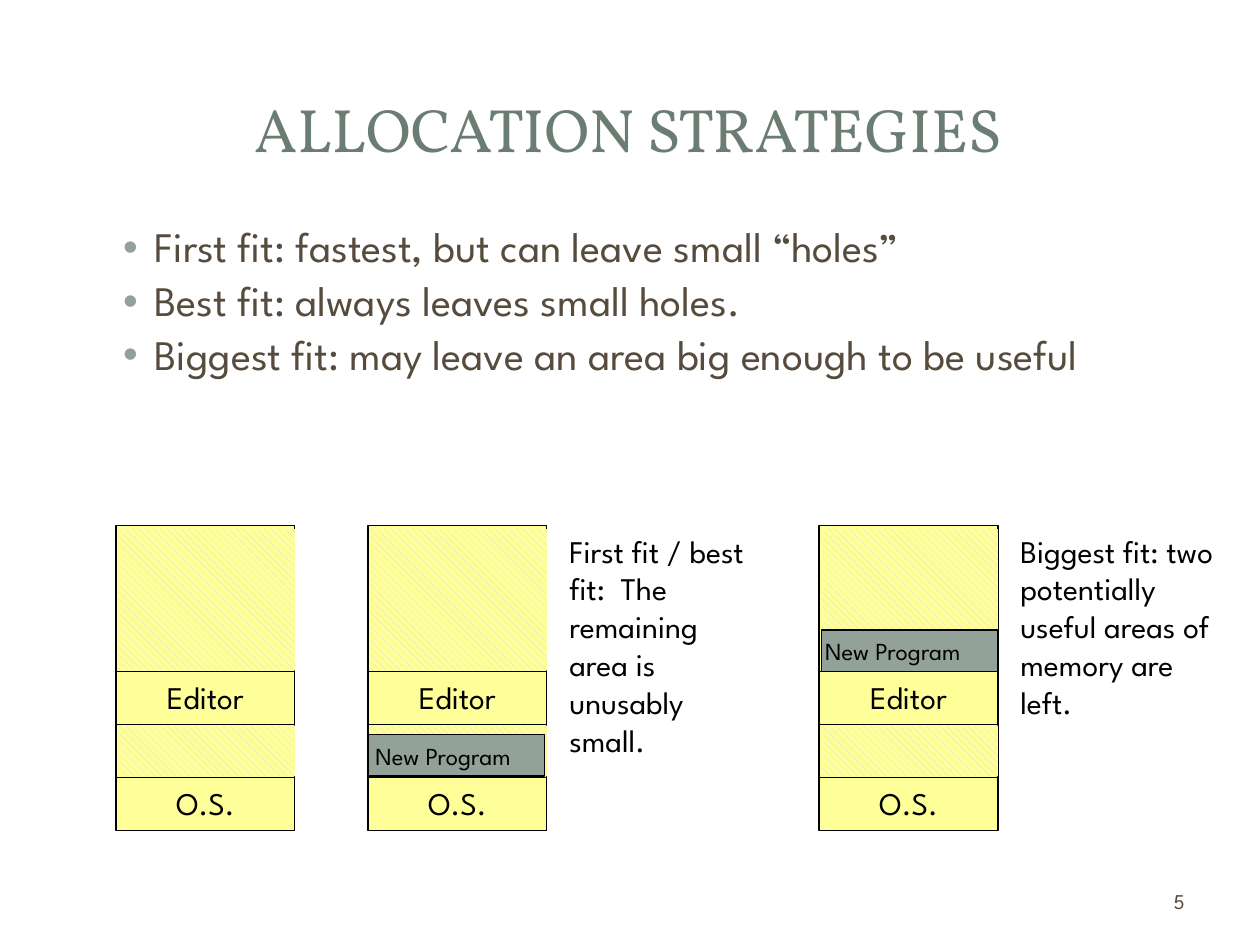
from lxml import etree
from pptx import Presentation
from pptx.dml.color import RGBColor
from pptx.enum.dml import MSO_PATTERN
from pptx.enum.shapes import MSO_CONNECTOR, MSO_SHAPE
from pptx.enum.text import MSO_ANCHOR, PP_ALIGN
from pptx.oxml.ns import qn
from pptx.util import Inches, Pt

LEFT, CENTER, RIGHT = PP_ALIGN.LEFT, PP_ALIGN.CENTER, PP_ALIGN.RIGHT
TOP, MIDDLE = MSO_ANCHOR.TOP, MSO_ANCHOR.MIDDLE
RECT = MSO_SHAPE.RECTANGLE
STRAIGHT = MSO_CONNECTOR.STRAIGHT
HATCH = MSO_PATTERN.WIDE_DOWNWARD_DIAGONAL

SAGE = RGBColor(0x6B, 0x7D, 0x72)
GREY = RGBColor(0x93, 0xA2, 0x99)
BROWN = RGBColor(0x56, 0x4B, 0x3C)
YELLOW = RGBColor(0xFF, 0xFF, 0x99)
PALE = RGBColor(0xD9, 0xD9, 0xD9)
BLACK = RGBColor(0, 0, 0)

BODY, HEAD = "League Spartan", "Vollkorn"
TALL, WIDE = 2.42, 1.42  # size of a memory column
MEM_TOP = 4.17


def add_text(parts, text, box, size=18, font=BODY, color=BLACK,
             align=LEFT, anchor=TOP):
    """Add a text box; each line of text becomes a paragraph."""
    shape = parts.add_textbox(*map(Inches, box))
    frame = shape.text_frame
    frame.word_wrap = True
    frame.vertical_anchor = anchor
    frame.text = text
    for par in frame.paragraphs:
        par.alignment = align
        run = par.runs[0].font
        run.size, run.name = Pt(size), font
        run.color.rgb = color
    return shape


def add_rect(parts, box, color, hatch=False):
    """Add an outlined solid rectangle, or a hatched one with no outline."""
    shape = parts.add_shape(RECT, *map(Inches, box))
    shape.shadow.inherit = False
    if hatch:
        shape.fill.patterned()
        shape.fill.pattern = HATCH
        shape.fill.fore_color.rgb = PALE
        shape.fill.back_color.rgb = color
        shape.line.fill.background()
    else:
        shape.fill.solid()
        shape.fill.fore_color.rgb = color
        shape.line.color.rgb = BLACK
        shape.line.width = Pt(0.75)


def add_rule(parts, x, y, width):
    line = parts.add_connector(
        STRAIGHT, Inches(x), Inches(y), Inches(x + width), Inches(y))
    line.line.color.rgb = BLACK
    line.line.width = Pt(0.75)
    etree.SubElement(line._element.spPr, qn("a:effectLst"))


def add_list(parts, items, box):
    """Bulleted list with hanging indents."""
    shape = add_text(parts, "\n".join(items), box, size=24, color=BROWN)
    for par in shape.text_frame.paragraphs:
        par.line_spacing = 0.9
        par.space_before = Pt(4.8)
        props = par._p.get_or_add_pPr()
        props.set("marL", str(Inches(0.38)))
        props.set("indent", str(Inches(-0.25)))
        tint = etree.SubElement(props, qn("a:buClr"))
        etree.SubElement(tint, qn("a:srgbClr"), val=str(GREY))
        etree.SubElement(props, qn("a:buFont"), typeface="Arial")
        etree.SubElement(props, qn("a:buChar"), char="•")


def add_memory(slide, box):
    """Memory column: free, program, free and system areas, top to bottom."""
    x, y, width, height = box
    parts = slide.shapes.add_group_shape().shapes
    add_rect(parts, box, YELLOW)
    # Free areas
    for drop, tall in ((0.03, 1.12), (1.59, 0.4)):
        add_rect(parts, (x + 0.02, y + drop, width - 0.02, tall), YELLOW, True)
    # Area borders
    for drop in (1.16, 1.58, 2):
        add_rule(parts, x, y + drop, width)
    # Occupied areas
    for text, drop in (("Editor", 1.16), ("O.S.", 2)):
        add_text(parts, text, (x, y + drop, width, 0.4), align=CENTER)


def add_program(slide, box, shift):
    """Newly loaded program; shift moves its label against the block."""
    x, y, width, height = box
    add_rect(slide.shapes, box, GREY)
    add_text(slide.shapes, "New Program", (x + shift, y, 1.58, 0.34), size=14)


def main():
    deck = Presentation()
    deck.slide_width, deck.slide_height = Inches(10), Inches(7.5)
    slide = deck.slides.add_slide(deck.slide_layouts[6])
    parts = slide.shapes

    # Title, list and page number
    add_text(parts, "ALLOCATION STRATEGIES", (0.47, 0.45, 9.03, 1.14),
             size=35, font=HEAD, color=SAGE, align=CENTER, anchor=MIDDLE)
    add_list(parts, (
        "First fit: fastest, but can leave small “holes”",
        "Best fit: always leaves small holes.",
        "Biggest fit: may leave an area big enough to be useful",
    ), (0.75, 1.75, 8.67, 2.2))
    add_text(parts, "5", (7.17, 6.95, 2.33, 0.4), size=12, color=BROWN,
             align=RIGHT, anchor=MIDDLE)

    # Memory before loading, after first or best fit, and after biggest fit
    for x in (0.92, 2.92, 6.5):
        add_memory(slide, (x, MEM_TOP, WIDE, TALL))
    add_program(slide, (2.92, 5.83, 1.4, 0.33), -0.04)
    add_program(slide, (6.52, 5, 1.4, 0.33), -0.07)

    # Remarks
    add_text(parts,
             "First fit / best fit:  The remaining area is unusably small.",
             (4.42, MEM_TOP, 1.67, 1.92))
    add_text(parts,
             "Biggest fit: two potentially useful areas of memory are left.",
             (8, MEM_TOP, 1.83, 1.62))

    deck.save("out.pptx")


if __name__ == "__main__":
    main()
